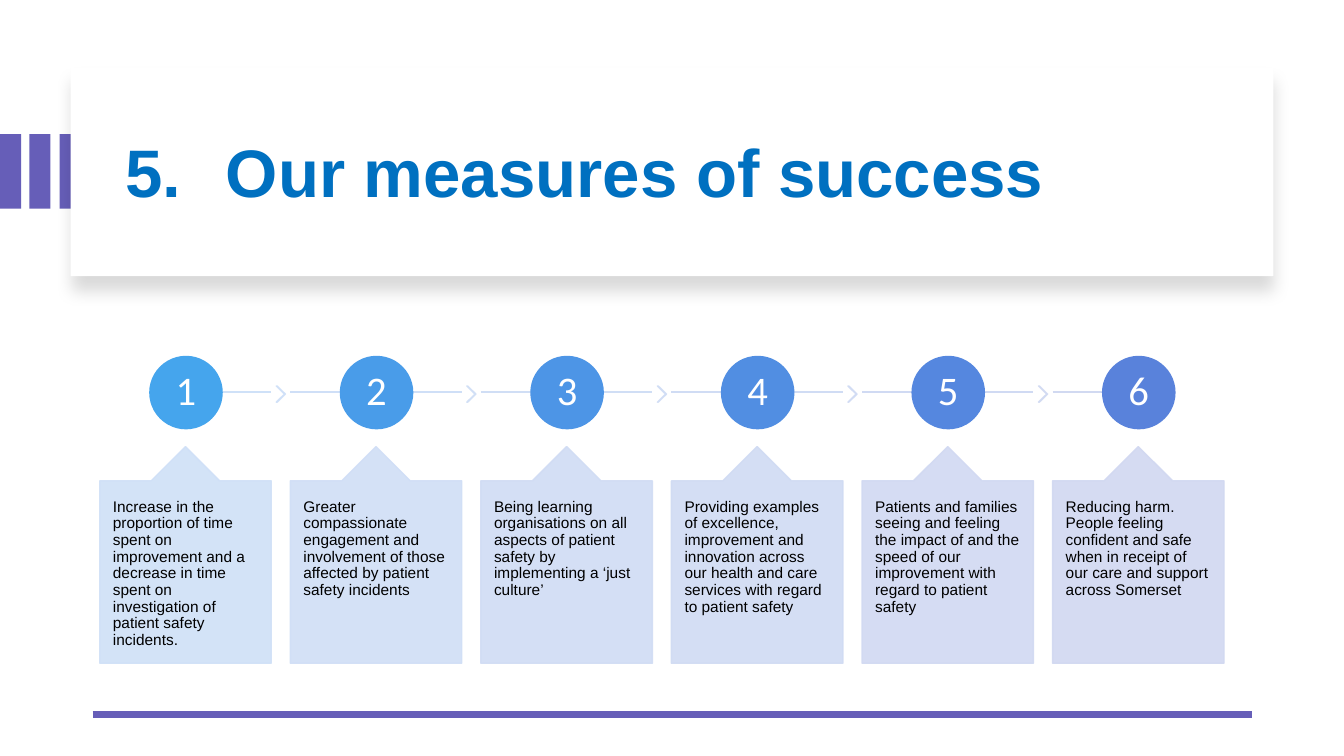
"""Build the 'Our measures of success' slide with six numbered measures."""
from lxml import etree
from pptx import Presentation
from pptx.dml.color import RGBColor
from pptx.enum.shapes import MSO_CONNECTOR, MSO_SHAPE
from pptx.enum.text import MSO_ANCHOR, MSO_AUTO_SIZE, PP_ALIGN
from pptx.oxml import parse_xml
from pptx.oxml.ns import nsdecls, qn
from pptx.util import Inches, Pt

RECTANGLE, ELLIPSE = MSO_SHAPE.RECTANGLE, MSO_SHAPE.OVAL
CHEVRON, CALLOUT = MSO_SHAPE.CHEVRON, MSO_SHAPE.UP_ARROW_CALLOUT
STRAIGHT = MSO_CONNECTOR.STRAIGHT
TOP, MIDDLE = MSO_ANCHOR.TOP, MSO_ANCHOR.MIDDLE
LEFT, CENTER = PP_ALIGN.LEFT, PP_ALIGN.CENTER
NO_AUTOFIT = MSO_AUTO_SIZE.NONE

WHITE = RGBColor(0xFF, 0xFF, 0xFF)
BLACK = RGBColor(0x00, 0x00, 0x00)
PURPLE = RGBColor(0x66, 0x5E, 0xB8)
TITLE_BLUE = RGBColor(0x00, 0x70, 0xC0)
TINT_FIRST = RGBColor(0xCF, 0xE1, 0xF8)
TINT_LAST = RGBColor(0xD1, 0xD8, 0xF1)
TINT_STEPS = 16

MEASURES = [
    (RGBColor(0x45, 0xA5, 0xED), "Increase in the proportion of time spent on improvement and a "
     "decrease in time spent on investigation of patient safety incidents."),
    (RGBColor(0x49, 0x9C, 0xE9), "Greater compassionate engagement and involvement of those "
     "affected by patient safety incidents"),
    (RGBColor(0x4D, 0x95, 0xE6), "Being learning organisations on all aspects of patient safety "
     "by implementing a ‘just culture’"),
    (RGBColor(0x51, 0x8E, 0xE2), "Providing examples of excellence, improvement and innovation "
     "across our health and care services with regard to patient safety"),
    (RGBColor(0x55, 0x87, 0xDF), "Patients and families seeing and feeling the impact of and the "
     "speed of our improvement with regard to patient safety"),
    (RGBColor(0x59, 0x82, 0xDB), "Reducing harm. People feeling confident and safe when in "
     "receipt of our care and support across Somerset"),
]
FIRST_LEFT, PITCH, CARD_WIDTH = 0.99, 1.89, 1.7

deck = Presentation()
deck.slide_width, deck.slide_height = Inches(13.33), Inches(7.5)
page = deck.slides.add_slide(deck.slide_layouts[5])
shapes = page.shapes


def add_block(kind, left, top, width, height, color, step=None):
    block = shapes.add_shape(kind, Inches(left), Inches(top), Inches(width), Inches(height))
    block.shadow.inherit = False
    block.fill.solid()
    block.fill.fore_color.rgb = color
    block.line.fill.background()
    if step is not None:
        block.line.color.rgb = color
        block.line.width = Pt(1)
        for tint in block._element.spPr.iter(qn("a:srgbClr")):
            etree.SubElement(tint, qn("a:alpha"), val="90000")
    return block


def write(shape, text, font, size, color, align, anchor, side, end):
    frame = shape.text_frame
    frame.word_wrap = True
    frame.auto_size = NO_AUTOFIT
    frame.vertical_anchor = anchor
    frame.margin_left = frame.margin_right = Inches(side)
    frame.margin_top = frame.margin_bottom = Inches(end)
    frame.text = text
    para = frame.paragraphs[0]
    para.alignment = align
    para.line_spacing = 0.9
    span = para.runs[0]
    span.font.name, span.font.size, span.font.color.rgb = font, Pt(size), color
    return span


for left in (0, 0.29, 0.59):
    add_block(RECTANGLE, left, 1.33, 0.21, 0.74, PURPLE)

banner = add_block(RECTANGLE, 0.7, 0.67, 11.93, 2.07, WHITE)
shadow = parse_xml(
    f'<a:outerShdw {nsdecls("a")} blurRad="{Pt(11)}" dist="{Pt(10)}" dir="5400000" '
    'algn="t" rotWithShape="0"><a:srgbClr val="000000"><a:alpha val="15000"/></a:srgbClr>'
    '</a:outerShdw>')
banner._element.spPr.find(qn("a:effectLst")).append(shadow)

title = shapes.title
banner._element.addnext(title._element)
title.left, title.top = Inches(1.14), Inches(0.89)
title.width, title.height = Inches(11.13), Inches(1.7)
heading = write(title, "5.\tOur measures of success", "Arial", 48, TITLE_BLUE,
                LEFT, MIDDLE, 0.1, 0.05)
heading.font.bold = True

rules = [(0.92, 12.42, 7.09, PURPLE, 4.5)]
for index, (badge_color, text) in enumerate(MEASURES):
    left = FIRST_LEFT + index * PITCH
    is_first, is_last = index == 0, index == len(MEASURES) - 1
    tints = []
    for step in range(3 * index, 3 * index + 3):
        share = min(step / TINT_STEPS, 1)
        tints.append(RGBColor(*(round(a + (b - a) * share)
                                for a, b in zip(TINT_FIRST, TINT_LAST))))
    start = left + 0.95 if is_first else left
    finish = left + CARD_WIDTH / 2 if is_last else left + CARD_WIDTH
    rules.append((start, finish, 3.89, tints[0], 1))
    if not is_last:
        chevron = add_block(CHEVRON, left + 1.75, 3.83, 0.09, 0.16, tints[1], index)
        chevron.adjustments[0] = 0.9
    badge = add_block(ELLIPSE, left + 0.49, 3.53, 0.73, 0.73, badge_color)
    write(badge, str(index + 1), "Calibri", 29, WHITE, CENTER, MIDDLE, 0.03, 0.03)
    card = add_block(CALLOUT, left, 4.43, CARD_WIDTH, 2.15, tints[2], index)
    for position, value in enumerate((0.5, 0.2, 0.2, 1)):
        card.adjustments[position] = value
    write(card, text, "Arial", 11, BLACK, LEFT, TOP, 0.13, 0.18)

for start, finish, height, color, weight in rules:
    rule = shapes.add_connector(STRAIGHT, Inches(start), Inches(height),
                                Inches(finish), Inches(height))
    rule.line.color.rgb = color
    rule.line.width = Pt(weight)
    etree.SubElement(rule._element.spPr, qn("a:effectLst"))
    banner._element.addprevious(rule._element)
    if weight == 1:
        title._element.addnext(rule._element)

deck.save("out.pptx")
